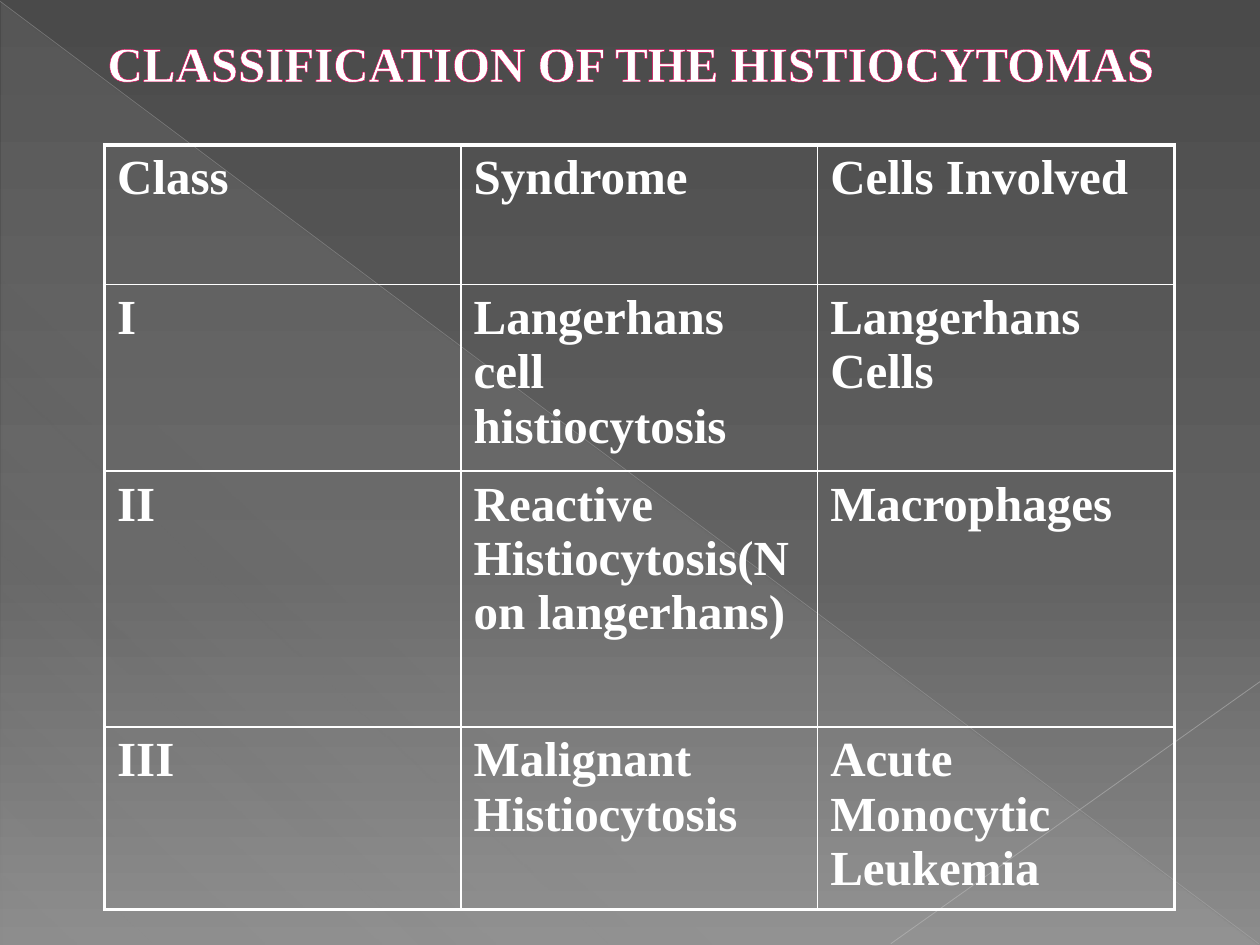
from dataclasses import dataclass

from lxml.etree import SubElement
from pptx import Presentation
from pptx.dml.color import RGBColor
from pptx.enum.shapes import MSO_CONNECTOR as Connector, MSO_SHAPE as Shape
from pptx.enum.text import MSO_ANCHOR as Anchor, PP_ALIGN as Align
from pptx.oxml import parse_xml
from pptx.oxml.ns import nsdecls, qn
from pptx.util import Inches, Pt


@dataclass(frozen=True)
class Theme:
    font: str = "Times New Roman"
    size: float = 28
    text: str = "FFFFFF"
    outline: str = "E40059"
    outline_width: float = 1.42
    border: str = "FFFFFF"
    outer: float = 2.25
    inner: float = 1
    backdrop: tuple = ((0, "4A4A4A", 100), (60, "626262", 100), (100, "8C8C8C", 100))
    sheen: tuple = ((0, "D2D2D2", 10), (70, "D2D2D2", 8), (100, "D2D2D2", 1))
    long_line: tuple = ("BFBFBF", 0.39, 35)
    short_line: tuple = ("C6C6C6", 0.47, 45)


def color_xml(color, alpha=100):
    return f'<a:srgbClr val="{color}"><a:alpha val="{alpha * 1000}"/></a:srgbClr>'


def gradient(stops, angle):
    marks = "".join(
        f'<a:gs pos="{position * 1000}">{color_xml(color, alpha)}</a:gs>'
        for position, color, alpha in stops
    )
    return parse_xml(
        f'<a:gradFill {nsdecls("a")} rotWithShape="1"><a:gsLst>{marks}</a:gsLst>'
        f'<a:lin ang="{angle * 60000}" scaled="0"/></a:gradFill>'
    )


def stroke(tag, color, width, alpha=100):
    return parse_xml(
        f'<a:{tag} {nsdecls("a")} w="{Pt(width)}"><a:solidFill>'
        f'{color_xml(color, alpha)}</a:solidFill><a:prstDash val="solid"/></a:{tag}>'
    )


def write(para, text, *, font, size, color, bold=True, align=Align.LEFT):
    para.alignment = align
    span = para.add_run()
    span.text = text
    span.font.name = font
    span.font.size = Pt(size)
    span.font.bold = bold
    span.font.color.rgb = RGBColor.from_string(color)
    return span


class PageBuilder:
    def __init__(self, page, theme):
        self.page = page
        self.theme = theme
        self.type = {"font": theme.font, "size": theme.size, "color": theme.text}

    def background(self):
        fill = self.page.background.fill
        fill.solid()
        properties = self.page._element.cSld.bg.bgPr
        properties.replace(properties[0], gradient(self.theme.backdrop, 90))

    def triangle(self, left, top, width, height):
        box = self.page.shapes.add_shape(
            Shape.RIGHT_TRIANGLE, Inches(left), Inches(top), Inches(width), Inches(height)
        )
        box.shadow.inherit = False
        box.line.fill.background()
        box.fill.background()
        properties = box._element.spPr
        properties.replace(properties.find(qn("a:noFill")), gradient(self.theme.sheen, 133))

    def line(self, start, end, style):
        points = [Inches(value) for value in (*start, *end)]
        connector = self.page.shapes.add_connector(Connector.STRAIGHT, *points)
        properties = connector._element.spPr
        properties.append(stroke("ln", *style))
        SubElement(properties, qn("a:effectLst"))

    def title(self, text, left, top, width, height):
        box = self.page.shapes.title
        box.left, box.top = Inches(left), Inches(top)
        box.width, box.height = Inches(width), Inches(height)
        frame = box.text_frame
        frame.word_wrap = True
        frame.vertical_anchor = Anchor.TOP
        span = write(frame.paragraphs[0], text, align=Align.CENTER, **self.type)
        outline = stroke("ln", self.theme.outline, self.theme.outline_width)
        span.font._element.insert(0, outline)
        self.page.shapes._spTree.append(box._element)

    def table(self, rows, left, top, column_width, heights):
        count = len(rows[0])
        table = self.page.shapes.add_table(
            len(rows), count, Inches(left), Inches(top),
            Inches(column_width * count), Inches(sum(heights)),
        ).table
        table.first_row = table.horz_banding = False
        for column in table.columns:
            column.width = Inches(column_width)
        for row, height in zip(table.rows, heights):
            row.height = Inches(height)
        for r, texts in enumerate(rows):
            for c, text in enumerate(texts):
                edges = {
                    "lnL": c == 0,
                    "lnR": c == count - 1,
                    "lnT": r == 0,
                    "lnB": r == len(rows) - 1,
                }
                self.cell(table.cell(r, c), text, edges)

    def cell(self, cell, text, edges):
        para = cell.text_frame.paragraphs[0]
        write(para, text, **self.type)
        spacing = SubElement(para._p.get_or_add_pPr(), qn("a:spcBef"))
        SubElement(spacing, qn("a:spcPct")).set("val", "20000")
        properties = cell._tc.get_or_add_tcPr()
        for tag, is_outer in edges.items():
            width = self.theme.outer if is_outer else self.theme.inner
            properties.append(stroke(tag, self.theme.border, width))
        cell.fill.background()


def main():
    deck = Presentation()
    deck.slide_width, deck.slide_height = Inches(10), Inches(7.5)
    theme = Theme()
    builder = PageBuilder(deck.slides.add_slide(deck.slide_layouts[5]), theme)
    builder.background()
    builder.triangle(0.01, 0.02, 9.98, 7.48)
    builder.line((0, 0.01), (9.99, 7.49), theme.long_line)
    builder.line((10, 5.41), (7.07, 7.49), theme.short_line)
    rows = [
        ("Class", "Syndrome", "Cells Involved"),
        ("I", "Langerhans cell histiocytosis", "Langerhans Cells"),
        ("II", "Reactive Histiocytosis(Non langerhans)", "Macrophages"),
        ("III", "Malignant Histiocytosis", "Acute Monocytic Leukemia"),
    ]
    builder.table(rows, 0.83, 1.15, 2.83, (1.11, 1.48, 2.03, 1.45))
    builder.title("CLASSIFICATION OF THE HISTIOCYTOMAS", 0.28, 0.21, 9.45, 0.57)
    deck.save("out.pptx")


if __name__ == "__main__":
    main()
